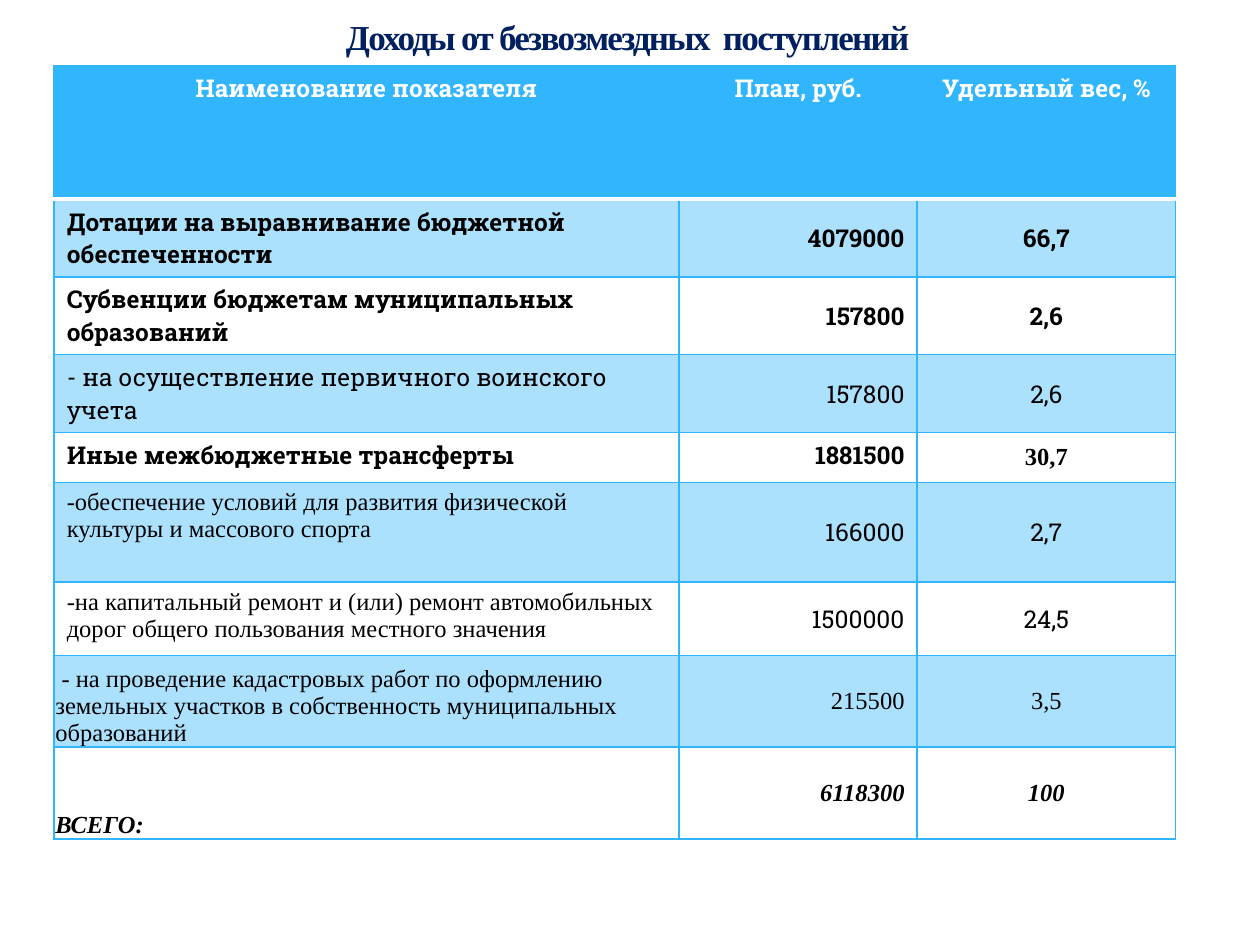
from lxml import etree
from pptx import Presentation
from pptx.dml.color import RGBColor
from pptx.enum.text import MSO_ANCHOR, PP_ALIGN
from pptx.oxml.ns import qn
from pptx.util import Inches, Pt

LEFT, CENTER, RIGHT = PP_ALIGN.LEFT, PP_ALIGN.CENTER, PP_ALIGN.RIGHT
TOP, MIDDLE, BOTTOM = MSO_ANCHOR.TOP, MSO_ANCHOR.MIDDLE, MSO_ANCHOR.BOTTOM
BLUE = RGBColor(0x31, 0xB6, 0xFD)
NAVY = RGBColor(0x00, 0x20, 0x60)
WHITE = RGBColor(0xFF, 0xFF, 0xFF)
BLACK = RGBColor(0x00, 0x00, 0x00)
SLAB, TIMES = "Roboto Slab", "Times New Roman"

COL_WIDTHS = [4.96, 1.89, 2.05]
ALIGNS = [LEFT, RIGHT, CENTER]
ROWS = [
    (1.06, ["Наименование показателя", "План, руб.", "Удельный вес, %"],
     [SLAB, SLAB, SLAB], [TOP, TOP, TOP], {"bold": True}),
    (0.58, ["Дотации на выравнивание бюджетной обеспеченности", "4079000", "66,7"],
     [SLAB, SLAB, SLAB], [TOP, MIDDLE, MIDDLE], {"bold": True}),
    (0.58, ["Субвенции бюджетам муниципальных образований", "157800", "2,6"],
     [SLAB, SLAB, SLAB], [TOP, MIDDLE, MIDDLE], {"bold": True}),
    (0.58, ["- на осуществление первичного воинского учета", "157800", "2,6"],
     [SLAB, SLAB, SLAB], [TOP, MIDDLE, MIDDLE], {"bold": False}),
    (0.4, ["Иные межбюджетные трансферты", "1881500", "30,7"],
     [SLAB, SLAB, TIMES], [TOP, TOP, MIDDLE], {"bold": True}),
    (0.79, ["-обеспечение условий для развития физической культуры и массового спорта",
            "166000", "2,7"],
     [TIMES, SLAB, SLAB], [TOP, MIDDLE, MIDDLE], {"bold": False}),
    (0.58, ["-на капитальный ремонт и (или) ремонт автомобильных дорог общего "
            "пользования местного значения", "1500000", "24,5"],
     [TIMES, SLAB, SLAB], [TOP, MIDDLE, MIDDLE], {"bold": False}),
    (0.73, [" - на проведение кадастровых работ по оформлению земельных участков "
            "в собственность муниципальных образований", "215500", "3,5"],
     [TIMES, TIMES, TIMES], [BOTTOM, MIDDLE, MIDDLE], {"bold": False}),
    (0.73, ["ВСЕГО:", "6118300", "100"],
     [TIMES, TIMES, TIMES], [BOTTOM, MIDDLE, MIDDLE], {"bold": True, "italic": True}),
]


def write(p, text, align, color, fmt):
    p.alignment = align
    r = p.add_run()
    r.text = text
    for name, value in fmt.items():
        setattr(r.font, name, value)
    r.font.color.rgb = color
    return r


def add_border(cell, index, side, color, width):
    ln = etree.Element(qn(f"a:{side}"), w=str(Pt(width)))
    fill = etree.SubElement(ln, qn("a:solidFill"))
    etree.SubElement(fill, qn("a:srgbClr"), val=str(color))
    cell._tc.get_or_add_tcPr().insert(index, ln)


prs = Presentation()
prs.slide_width, prs.slide_height = Inches(10), Inches(7.5)
s = prs.slides.add_slide(prs.slide_layouts[6])

table = s.shapes.add_table(len(ROWS), len(COL_WIDTHS), Inches(0.43), Inches(0.52),
                           Inches(8.9), Inches(6.03)).table
for column, width in zip(table.columns, COL_WIDTHS):
    column.width = Inches(width)

for i, (height, texts, fonts, anchors, style) in enumerate(ROWS):
    table.rows[i].height = Inches(height)
    for j, text in enumerate(texts):
        cell = table.cell(i, j)
        cell.vertical_anchor = anchors[j]
        if anchors[j] == BOTTOM:
            cell.margin_left = cell.margin_right = cell.margin_top = Inches(0.01)
            cell.margin_bottom = 0
        write(cell.text_frame.paragraphs[0], text, ALIGNS[j] if i else CENTER,
              BLACK if i else WHITE, {"size": Pt(14), "name": fonts[j], **style})
        if i == 0 or i % 2:
            cell.fill.solid()
            cell.fill.fore_color.rgb = BLUE
        else:
            cell.fill.background()
        if i % 2:
            tint = cell._tc.tcPr.find(qn("a:solidFill")).find(qn("a:srgbClr"))
            etree.SubElement(tint, qn("a:alpha"), val="40000")
        borders = {"lnL": (BLUE, 1), "lnR": (BLUE, 1),
                   "lnT": (WHITE, 3) if i == 1 else (BLUE, 1),
                   "lnB": (WHITE, 3) if i == 0 else (BLUE, 1)}
        for index, (side, (color, width)) in enumerate(borders.items()):
            add_border(cell, index, side, color, width)

tf = s.shapes.add_textbox(Inches(1.14), 0, Inches(7.68), Inches(0.58)).text_frame
tf.word_wrap = True
tf.vertical_anchor = MIDDLE
r = write(tf.paragraphs[0], "Доходы от безвозмездных  поступлений", CENTER, NAVY,
          {"size": Pt(20), "name": TIMES, "bold": True})
r.font._element.set("spc", "-100")

prs.save("out.pptx")
